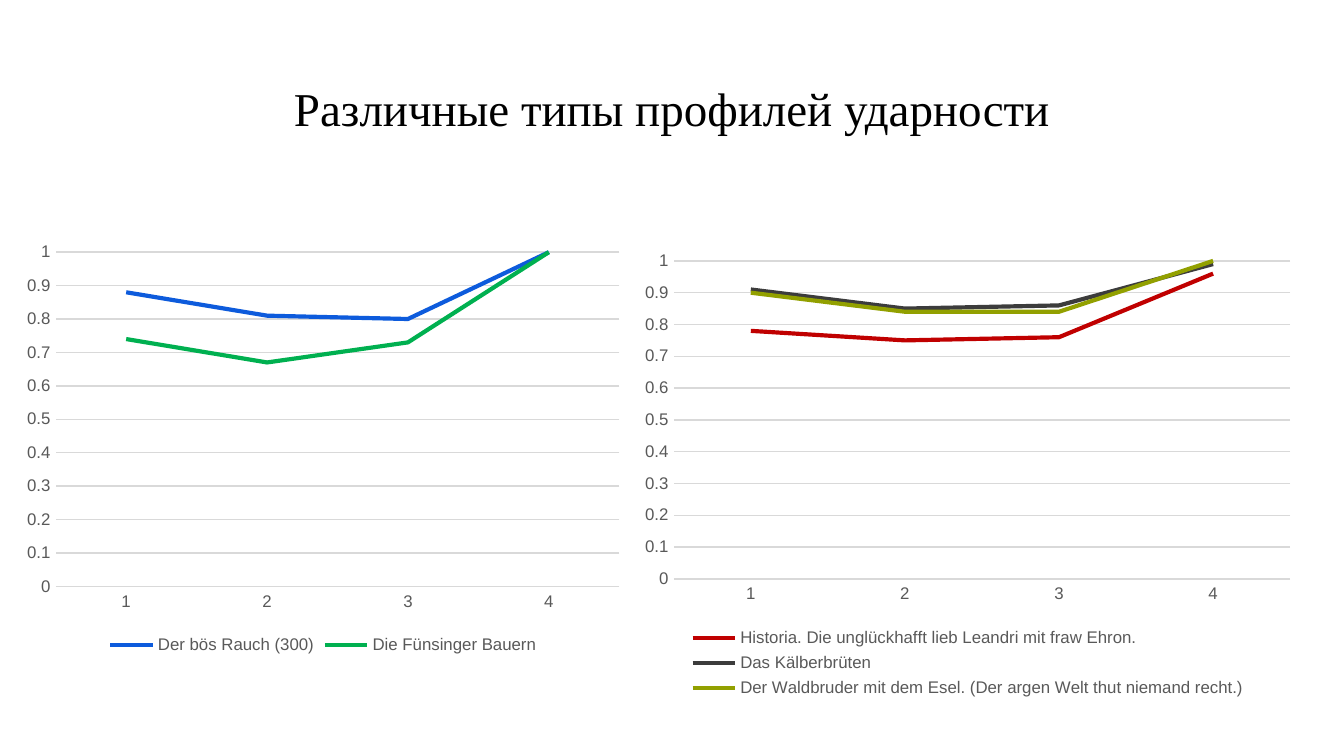
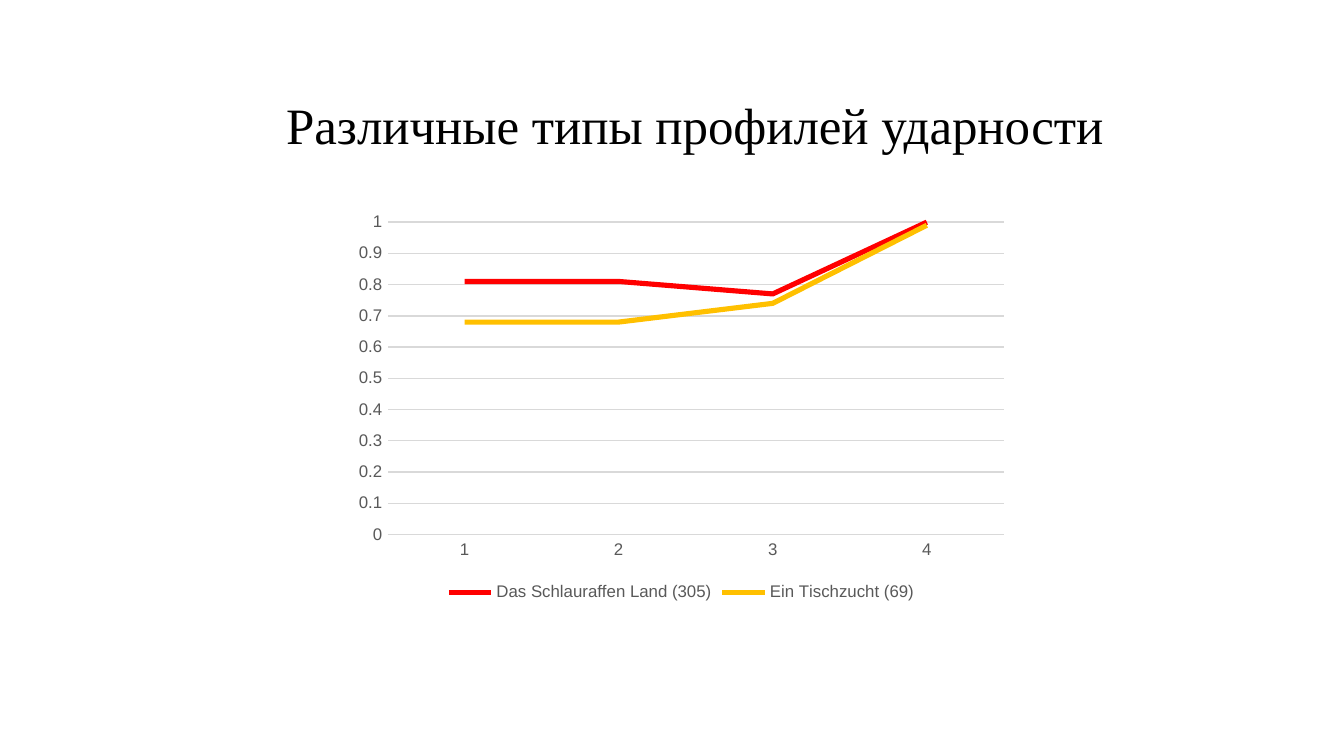
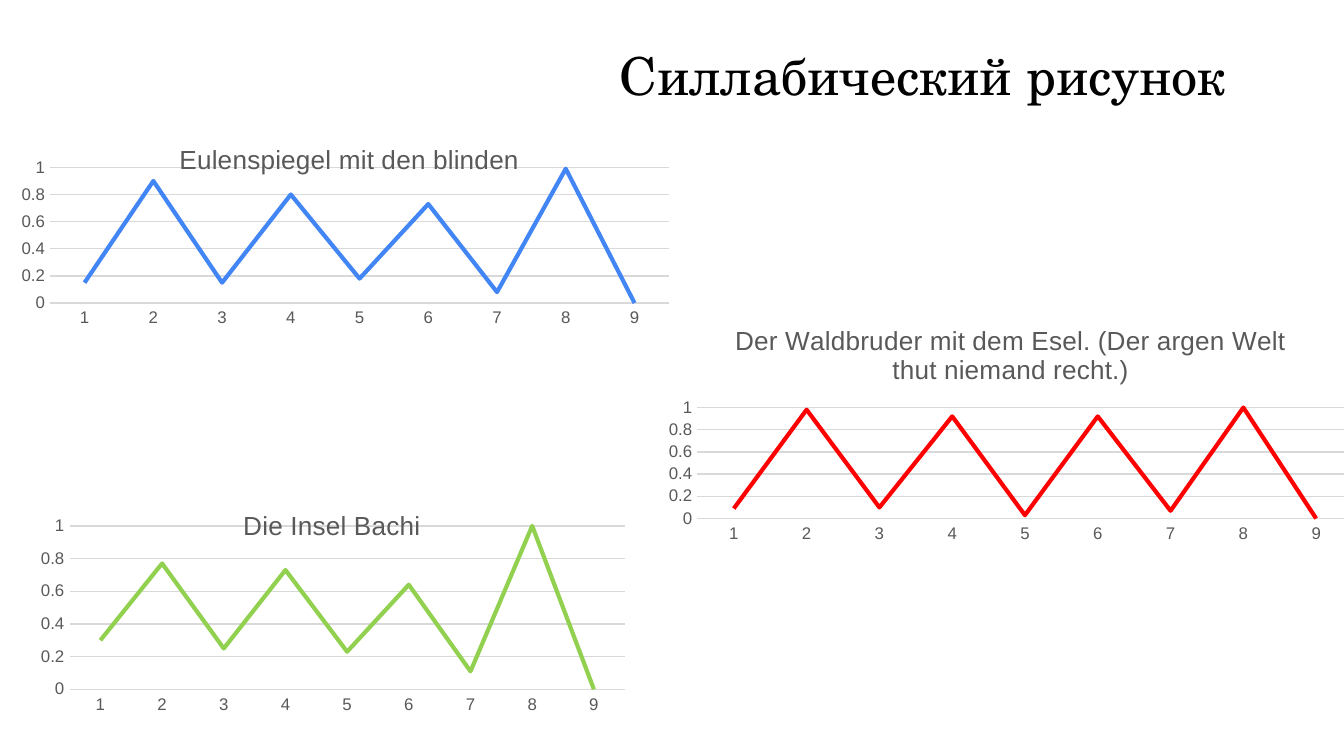
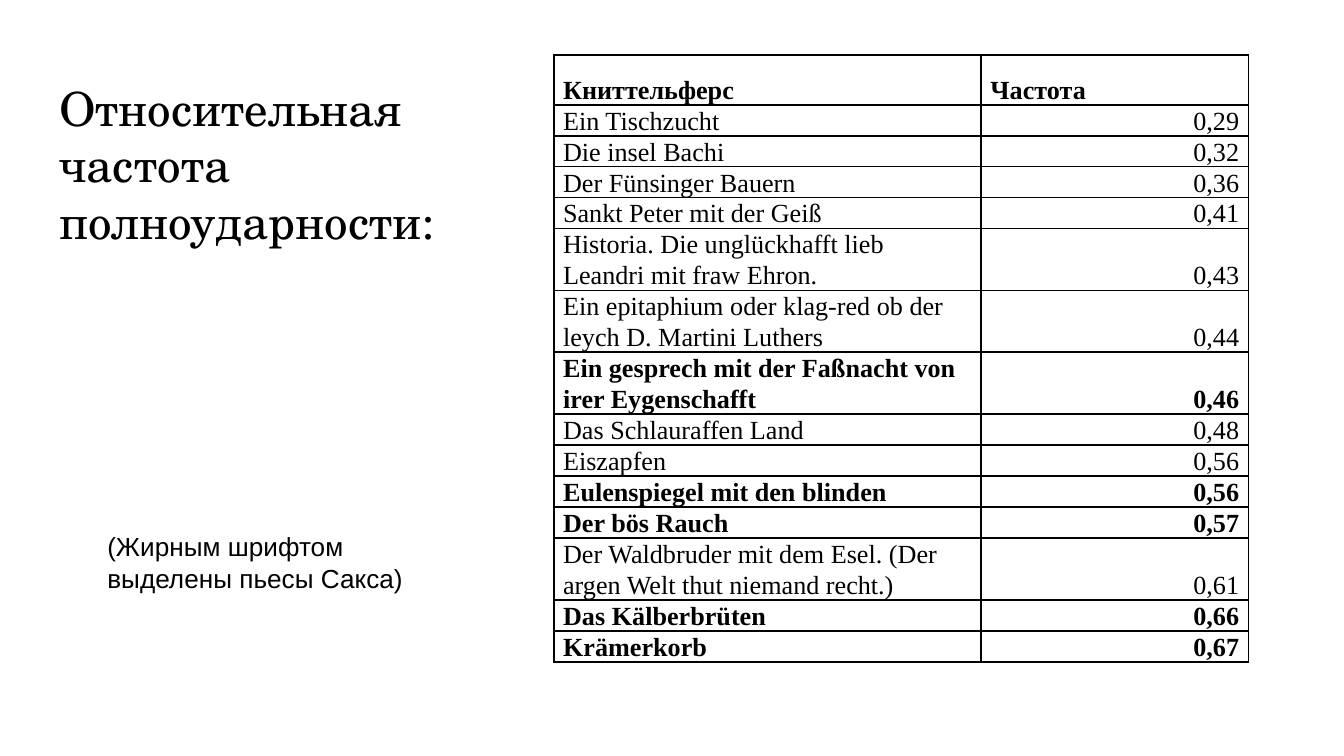
from lxml import etree
from pptx import Presentation
from pptx.chart.data import CategoryChartData
from pptx.dml.color import RGBColor
from pptx.enum.chart import XL_CHART_TYPE as ChartType
from pptx.enum.chart import XL_LEGEND_POSITION as LegendPosition
from pptx.enum.chart import XL_TICK_MARK as TickMark
from pptx.enum.text import MSO_ANCHOR as Anchor
from pptx.enum.text import MSO_AUTO_SIZE as AutoSize
from pptx.enum.text import PP_ALIGN as Align
from pptx.oxml import parse_xml
from pptx.oxml.ns import nsdecls, qn
from pptx.util import Pt

PX = 9144
WIDTH = 1000
BLACK = RGBColor(0x00, 0x00, 0x00)
WHITE = RGBColor(0xFF, 0xFF, 0xFF)
LABEL_GRAY = RGBColor(0x59, 0x59, 0x59)
GRID_GRAY = RGBColor(0xD9, 0xD9, 0xD9)
BLUE = RGBColor(0x0D, 0x5B, 0xDC)
GREEN = RGBColor(0x00, 0xB0, 0x50)
DARK_RED = RGBColor(0xC0, 0x00, 0x00)
CHARCOAL = RGBColor(0x3C, 0x3C, 0x3C)
OLIVE = RGBColor(0x92, 0xA0, 0x00)
RED = RGBColor(0xFF, 0x00, 0x00)
AMBER = RGBColor(0xFF, 0xC0, 0x00)
SKY_BLUE = RGBColor(0x42, 0x85, 0xF4)
LIME = RGBColor(0x92, 0xD0, 0x50)
SANS = "Arial"
SERIF = "Times New Roman"
SCHOLA = "TeX Gyre Schola"

PROFILES = "Различные типы профилей ударности"
WALDBRUDER = "Der Waldbruder mit dem Esel. (Der argen Welt thut niemand recht.)"
LEANDRI = "Historia. Die unglückhafft lieb Leandri mit fraw Ehron."
FREQUENCIES = [
    ("Ein Tischzucht", "0,29", False),
    ("Die insel Bachi", "0,32", False),
    ("Der Fünsinger Bauern", "0,36", False),
    ("Sankt Peter mit der Geiß", "0,41", False),
    (LEANDRI, "0,43", False),
    ("Ein epitaphium oder klag-red ob der leych D. Martini Luthers", "0,44", False),
    ("Ein gesprech mit der Faßnacht von irer Eygenschafft", "0,46", True),
    ("Das Schlauraffen Land", "0,48", False),
    ("Eiszapfen", "0,56", False),
    ("Eulenspiegel mit den blinden", "0,56", True),
    ("Der bös Rauch", "0,57", True),
    (WALDBRUDER, "0,61", False),
    ("Das Kälberbrüten", "0,66", True),
    ("Krämerkorb", "0,67", True),
]


def px(*lengths):
    return [length * PX for length in lengths]


def set_font(font, size, name=SANS, color=BLACK, bold=False):
    font.size = Pt(size)
    font.name = name
    font.color.rgb = color
    font.bold = bold


class Deck:
    def __init__(self):
        self.presentation = Presentation()
        self.presentation.slide_width = WIDTH * PX
        self.presentation.slide_height = WIDTH * PX * 9 // 16
        self.slide = None

    def add_slide(self, heading, box, size, font=SERIF, align=Align.LEFT, spacing=1.0):
        self.slide = self.presentation.slides.add_slide(self.presentation.slide_layouts[5])
        self.slide.background.fill.solid()
        self.slide.background.fill.fore_color.rgb = WHITE
        title = self.slide.shapes.title
        title.left, title.top, title.width, title.height = px(*box)
        frame = title.text_frame
        frame.text = heading
        frame.word_wrap = True
        frame.auto_size = AutoSize.NONE
        frame.vertical_anchor = Anchor.TOP
        frame.margin_left = frame.margin_right = 10 * PX
        frame.margin_top = frame.margin_bottom = 10 * PX
        paragraph = frame.paragraphs[0]
        paragraph.alignment = align
        paragraph.line_spacing = spacing
        set_font(paragraph.font, size, font)

    def line_chart(self, box, series, weight=2.25, unit=0.1, title=None, plot_area=None):
        data = CategoryChartData()
        data.categories = [str(i + 1) for i in range(len(series[0][1]))]
        for name, values, _ in series:
            data.add_series(name, values)
        chart = self.slide.shapes.add_chart(ChartType.LINE, *px(*box), data).chart
        set_font(chart.font, 10)
        chart.plots[0].vary_by_categories = False
        for drawn, (_, _, color) in zip(chart.plots[0].series, series):
            drawn.smooth = False
            drawn.format.line.color.rgb = color
            drawn.format.line.width = Pt(weight)
        self.style_axes(chart, unit)
        chart.has_title = title is not None
        chart.has_legend = title is None
        if title:
            frame = chart.chart_title.text_frame
            frame.text = title
            set_font(frame.paragraphs[0].font, 14, color=LABEL_GRAY)
            chart.chart_title.include_in_layout = False
        else:
            chart.legend.position = LegendPosition.BOTTOM
            chart.legend.include_in_layout = False
            set_font(chart.legend.font, 9, color=LABEL_GRAY)
        if plot_area:
            self.place_plot(chart, plot_area)

    def style_axes(self, chart, unit):
        syllables, share = chart.category_axis, chart.value_axis
        for axis in (syllables, share):
            axis.major_tick_mark = axis.minor_tick_mark = TickMark.NONE
            set_font(axis.tick_labels.font, 9, color=LABEL_GRAY)
        share.minimum_scale, share.maximum_scale = 0, 1
        share.major_unit = unit
        share.has_major_gridlines = True
        share.format.line.fill.background()
        for line in (syllables.format.line, share.major_gridlines.format.line):
            line.color.rgb = GRID_GRAY
            line.width = Pt(0.75)

    def place_plot(self, chart, fractions):
        area = chart.plots[0]._element.getparent()
        for layout in area.findall(qn("c:layout")):
            area.remove(layout)
        layout = parse_xml(f"<c:layout {nsdecls('c')}><c:manualLayout/></c:layout>")
        settings = [("layoutTarget", "inner"), ("xMode", "edge"), ("yMode", "edge")]
        settings += zip("xywh", fractions)
        for tag, value in settings:
            etree.SubElement(layout[0], qn(f"c:{tag}")).set("val", str(value))
        area.insert(0, layout)

    def table(self, left, top, widths, header, rows):
        lines = [(*header, True)] + rows
        heights = [37 if i == 0 or len(line[0]) > 45 else 19 for i, line in enumerate(lines)]
        box = px(left, top, sum(widths), sum(heights))
        table = self.slide.shapes.add_table(len(lines), len(widths), *box).table
        table.first_row = table.horz_banding = False
        for column, width in zip(table.columns, widths):
            column.width = width * PX
        for i, (*texts, bold) in enumerate(lines):
            table.rows[i].height = heights[i] * PX
            for j, text in enumerate(texts):
                align = Align.RIGHT if i and j else Align.LEFT
                self.fill_cell(table.cell(i, j), text, bold, align)

    def fill_cell(self, cell, text, bold, align):
        cell.text = text
        cell.vertical_anchor = Anchor.BOTTOM
        cell.margin_left = cell.margin_right = 7 * PX
        cell.margin_top = cell.margin_bottom = 0
        paragraph = cell.text_frame.paragraphs[0]
        paragraph.alignment = align
        paragraph.line_spacing = 1.07
        set_font(paragraph.font, 14, SERIF, bold=bold)
        cell.fill.background()
        properties = cell._tc.get_or_add_tcPr()
        for position, side in enumerate("LRTB"):
            border = parse_xml(
                f'<a:ln{side} {nsdecls("a")} w="{Pt(1)}"><a:solidFill>'
                f'<a:srgbClr val="{BLACK}"/></a:solidFill></a:ln{side}>'
            )
            properties.insert(position, border)

    def note(self, text, box):
        frame = self.slide.shapes.add_textbox(*px(*box)).text_frame
        frame.word_wrap = True
        frame.auto_size = AutoSize.SHAPE_TO_FIT_TEXT
        frame.text = text
        set_font(frame.paragraphs[0].font, 14)


def main():
    deck = Deck()

    deck.add_slide(PROFILES, (34, 49, 932, 63), 25.2, align=Align.CENTER)
    deck.line_chart((11, 174, 459, 317), [
        ("Der bös Rauch (300)", (0.88, 0.81, 0.8, 1), BLUE),
        ("Die Fünsinger Bauern", (0.74, 0.67, 0.73, 1), GREEN),
    ])
    deck.line_chart((470, 180, 500, 343), [
        (LEANDRI, (0.78, 0.75, 0.76, 0.96), DARK_RED),
        ("Das Kälberbrüten", (0.91, 0.85, 0.86, 0.99), CHARCOAL),
        (WALDBRUDER, (0.9, 0.84, 0.84, 1), OLIVE),
    ])

    deck.add_slide(PROFILES, (51, 65, 932, 63), 27.3, align=Align.CENTER, spacing=0.9)
    deck.line_chart((257, 152, 500, 300), [
        ("Das Schlauraffen Land (305)", (0.81, 0.81, 0.77, 1), RED),
        ("Ein Tischzucht (69)", (0.68, 0.68, 0.74, 0.99), AMBER),
    ], weight=2.75)

    deck.add_slide("Силлабический рисунок", (451, 22, 932, 63), 28, SCHOLA)
    eulenspiegel = (0.15, 0.9, 0.15, 0.8, 0.18, 0.73, 0.08, 0.99, 0)
    bachi = (0.3, 0.77, 0.25, 0.73, 0.23, 0.64, 0.11, 1, 0)
    waldbruder = (0.09, 0.98, 0.1, 0.92, 0.03, 0.92, 0.07, 1, 0)
    for title, name, values, color, box, plot_area in (
        ("Eulenspiegel mit den blinden", "Series 1", eulenspiegel, SKY_BLUE,
         (7, 94, 506, 153), (0.06, 0.2, 0.91, 0.66)),
        ("Die Insel Bachi", "Series 1", bachi, LIME,
         (20, 366, 454, 169), (0.07, 0.15, 0.91, 0.72)),
        (WALDBRUDER, WALDBRUDER, waldbruder, RED, (487, 228, 530, 180), None),
    ):
        deck.line_chart(box, [(name, values, color)], unit=0.2, title=title, plot_area=plot_area)

    deck.add_slide("Относительная частота полноударности:", (34, 49, 304, 62), 25.2, SCHOLA)
    deck.table(412, 41, (318, 199), ("Книттельферс", "Частота"), FREQUENCIES)
    deck.note("(Жирным шрифтом выделены пьесы Сакса)", (70, 390, 269, 57))

    deck.presentation.save("out.pptx")


if __name__ == "__main__":
    main()
